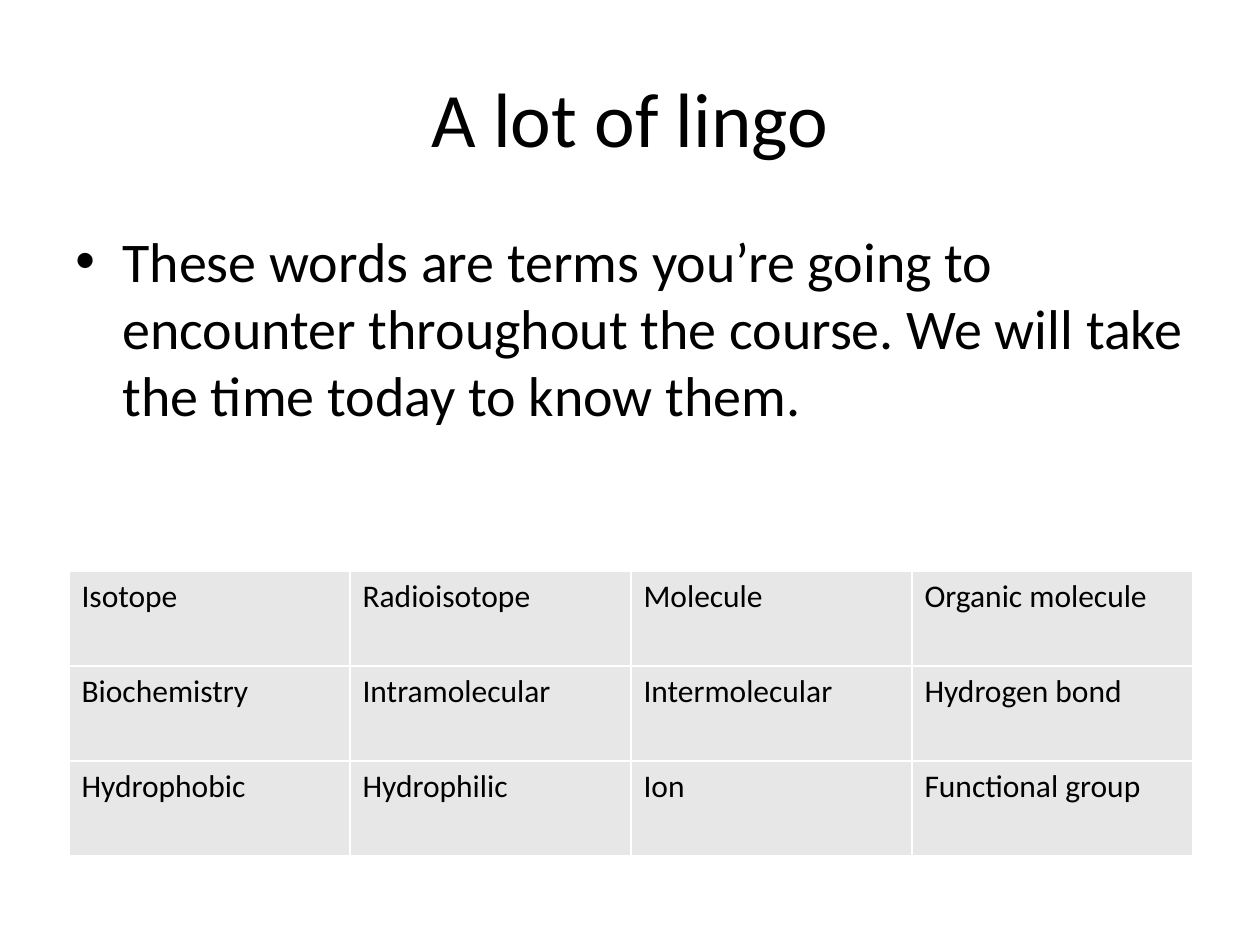
from dataclasses import dataclass

from lxml.etree import SubElement
from pptx import Presentation
from pptx.dml.color import RGBColor
from pptx.enum.text import MSO_ANCHOR, PP_ALIGN
from pptx.oxml import parse_xml
from pptx.oxml.ns import nsdecls, qn
from pptx.util import Pt

EMU_PER_PX = 914400 / 126


@dataclass(frozen=True)
class Theme:
    font: str = "Calibri"
    ink: str = "000000"
    cell: str = "E7E7E7"
    border: str = "FFFFFF"
    title_size: int = 44
    body_size: int = 32
    term_size: int = 18


THEME = Theme()

TERMS = [
    ["Isotope", "Radioisotope", "Molecule", "Organic molecule"],
    ["Biochemistry", "Intramolecular", "Intermolecular", "Hydrogen bond"],
    ["Hydrophobic", "Hydrophilic", "Ion", "Functional group"],
]


def px(length):
    return round(length * EMU_PER_PX)


def set_text(frame, text, size, align=PP_ALIGN.LEFT):
    frame.text = text
    paragraph = frame.paragraphs[0]
    paragraph.alignment = align
    font = paragraph.runs[0].font
    font.name = THEME.font
    font.size = Pt(size)
    font.color.rgb = RGBColor.from_string(THEME.ink)
    return paragraph


def add_title(slide, text, left, top, width, height):
    title = slide.shapes.title
    title.left, title.top = px(left), px(top)
    title.width, title.height = px(width), px(height)
    title.text_frame.vertical_anchor = MSO_ANCHOR.MIDDLE
    set_text(title.text_frame, text, THEME.title_size, PP_ALIGN.CENTER)


def add_bullet(slide, text, left, top, width, height, indent):
    body = slide.shapes.add_textbox(px(left), px(top), px(width), px(height))
    body.text_frame.word_wrap = True
    paragraph = set_text(body.text_frame, text, THEME.body_size)
    paragraph.space_before = Pt(THEME.body_size * 0.2)
    # Hanging bullet
    properties = paragraph._p.get_or_add_pPr()
    properties.set("marL", str(px(indent)))
    properties.set("indent", str(-px(indent)))
    SubElement(properties, qn("a:buFont")).set("typeface", "Arial")
    SubElement(properties, qn("a:buChar")).set("char", "•")


def set_borders(cell):
    properties = cell._tc.get_or_add_tcPr()
    for position, side in enumerate(("lnL", "lnR", "lnT", "lnB")):
        border = parse_xml(
            f'<a:{side} {nsdecls("a")} w="{Pt(1)}"><a:solidFill>'
            f'<a:srgbClr val="{THEME.border}"/></a:solidFill></a:{side}>'
        )
        properties.insert(position, border)


def add_term_table(slide, terms, left, top, column_width, row_height):
    rows, columns = len(terms), len(terms[0])
    table = slide.shapes.add_table(
        rows, columns, px(left), px(top),
        px(column_width * columns), px(row_height * rows),
    ).table
    table.first_row = table.horz_banding = False
    for column in table.columns:
        column.width = px(column_width)
    for row, row_terms in zip(table.rows, terms):
        row.height = px(row_height)
        for cell, term in zip(row.cells, row_terms):
            set_text(cell.text_frame, term, THEME.term_size)
            cell.fill.solid()
            cell.fill.fore_color.rgb = RGBColor.from_string(THEME.cell)
            set_borders(cell)


def main():
    presentation = Presentation()
    presentation.slide_width, presentation.slide_height = px(1260), px(945)
    slide = presentation.slides.add_slide(presentation.slide_layouts[5])

    # Heading and introduction
    add_title(slide, "A lot of lingo", 63, 38, 1134, 158)
    add_bullet(
        slide,
        "These words are terms you’re going to encounter throughout the course. "
        "We will take the time today to know them.",
        63, 220, 1134, 624, indent=47,
    )

    # Vocabulary grid
    add_term_table(slide, TERMS, 69, 571, column_width=281, row_height=95)

    presentation.save("out.pptx")


if __name__ == "__main__":
    main()
